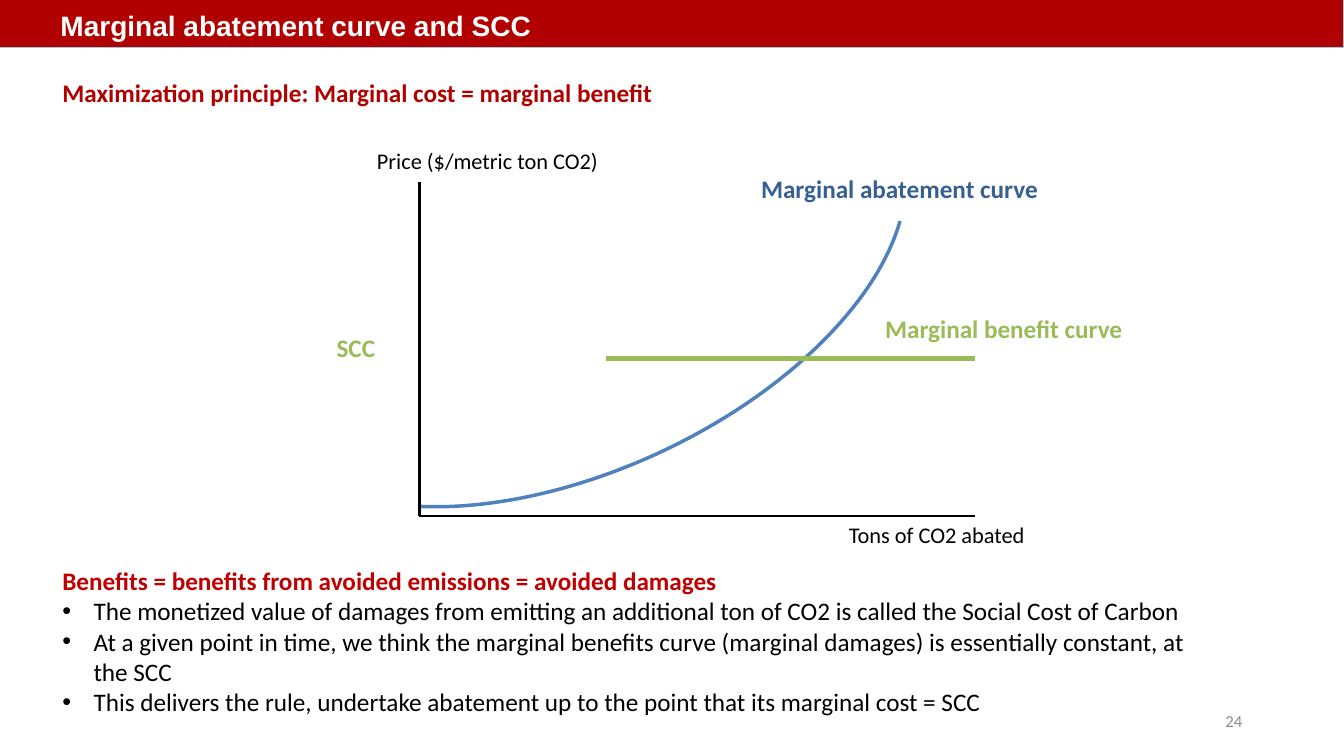
from lxml.etree import SubElement
from pptx import Presentation
from pptx.dml.color import RGBColor
from pptx.enum.shapes import MSO_CONNECTOR, MSO_SHAPE
from pptx.enum.text import MSO_ANCHOR, PP_ALIGN
from pptx.oxml.ns import qn
from pptx.util import Inches, Pt

WIDTH, HEIGHT = 13.33, 7.5
RED, BLUE, NAVY, GREEN, BLACK = "B00000", "4F81BD", "376092", "9BBB59", "000000"

TITLE = "Marginal abatement curve and SCC"
PRINCIPLE = "Maximization principle: Marginal cost = marginal benefit"
BENEFITS = "Benefits = benefits from avoided emissions = avoided damages"
POINTS = [
    "The monetized value of damages from emitting an additional ton of CO2 is called the Social Cost of Carbon",
    "At a given point in time, we think the marginal benefits curve (marginal damages) is essentially constant, at the SCC",
    "This delivers the rule, undertake abatement up to the point that its marginal cost = SCC",
]
PAGE = "24"

MARGIN = 0.52
ORIGIN_X, ORIGIN_Y = 4.16, 5.12
AXIS_TOP, AXIS_END = 1.81, 9.67
BENEFIT_START, BENEFIT_LEVEL = 6.01, 3.56

LABELS = [
    (PRINCIPLE, (MARGIN, 0.72, 6.1, 0.4), 18, RED, True),
    ("Marginal abatement curve", (7.45, 1.67, 3.87, 0.4), 18, NAVY, True),
    ("Marginal benefit curve", (8.68, 3.06, 3.87, 0.4), 18, GREEN, True),
    ("SCC", (3.24, 3.25, 0.8, 0.4), 18, GREEN, True),
    ("Price ($/metric ton CO2)", (3.64, 1.41, 3.03, 0.37), 16, BLACK, False),
    ("Tons of CO2 abated", (8.32, ORIGIN_Y, 3.03, 0.37), 16, BLACK, False),
]
LINES = [
    ((ORIGIN_X, AXIS_TOP), (ORIGIN_X, ORIGIN_Y), BLACK, 2),
    ((AXIS_END, ORIGIN_Y), (ORIGIN_X, ORIGIN_Y), BLACK, 2),
    ((BENEFIT_START, BENEFIT_LEVEL), (AXIS_END, BENEFIT_LEVEL), GREEN, 3.5),
]


def color(value):
    return RGBColor.from_string(value)


def place(box):
    return [Inches(length) for length in box]


def write(paragraph, words, size, ink, bold=False, face="Calibri"):
    run = paragraph.add_run()
    run.text = words
    run.font.size = Pt(size)
    run.font.name = face
    run.font.bold = bold
    run.font.color.rgb = color(ink)


def add_text(slide, box):
    frame = slide.shapes.add_textbox(*place(box)).text_frame
    frame.word_wrap = True
    return frame


def add_bullet(paragraph):
    properties = paragraph._p.get_or_add_pPr()
    properties.set("marL", str(Inches(0.31)))
    properties.set("indent", str(-Inches(0.31)))
    SubElement(properties, qn("a:buFont")).set("typeface", "Arial")
    SubElement(properties, qn("a:buChar")).set("char", "•")


def add_line(slide, start, end, ink, weight):
    line = slide.shapes.add_connector(MSO_CONNECTOR.STRAIGHT, *place(start + end))
    line.line.color.rgb = color(ink)
    line.line.width = Pt(weight)
    SubElement(line._element.spPr, qn("a:effectLst"))


def add_banner(slide):
    banner = slide.shapes.add_shape(MSO_SHAPE.RECTANGLE, *place((0, 0, WIDTH, 0.47)))
    banner.shadow.inherit = False
    banner.fill.solid()
    banner.fill.fore_color.rgb = color(RED)
    banner.line.color.rgb = color("93CDDD")
    banner.line.width = Pt(0)
    frame = banner.text_frame
    frame.margin_left = Inches(0.6)
    frame.vertical_anchor = MSO_ANCHOR.BOTTOM
    heading = frame.paragraphs[0]
    heading.alignment = PP_ALIGN.LEFT
    write(heading, TITLE, 20, "FFFFFF", True, "Arial")


def add_abatement_curve(slide):
    curve = slide.shapes.add_shape(MSO_SHAPE.ARC, *place((2.32, 0.94, 6.89, 3.72)))
    curve.shadow.inherit = False
    curve.rotation = 335
    curve.adjustments[0] = 8.48
    curve.adjustments[1] = 90.6
    curve.fill.background()
    curve.line.color.rgb = color(BLUE)
    curve.line.width = Pt(2.5)


def main():
    deck = Presentation()
    deck.slide_width, deck.slide_height = place((WIDTH, HEIGHT))
    slide = deck.slides.add_slide(deck.slide_layouts[6])

    add_banner(slide)
    add_abatement_curve(slide)
    for line in LINES:
        add_line(slide, *line)
    for words, box, size, ink, bold in LABELS:
        write(add_text(slide, box).paragraphs[0], words, size, ink, bold)

    summary = add_text(slide, (MARGIN, 5.56, 11.7, 1.62))
    write(summary.paragraphs[0], BENEFITS, 18, "C00000", True)
    for point in POINTS:
        paragraph = summary.add_paragraph()
        add_bullet(paragraph)
        write(paragraph, point, 18, BLACK)

    footer = add_text(slide, (9.42, 6.95, 3, 0.4))
    footer.vertical_anchor = MSO_ANCHOR.MIDDLE
    footer.paragraphs[0].alignment = PP_ALIGN.RIGHT
    write(footer.paragraphs[0], PAGE, 12, "8C8C8C")

    deck.save("out.pptx")


if __name__ == "__main__":
    main()
